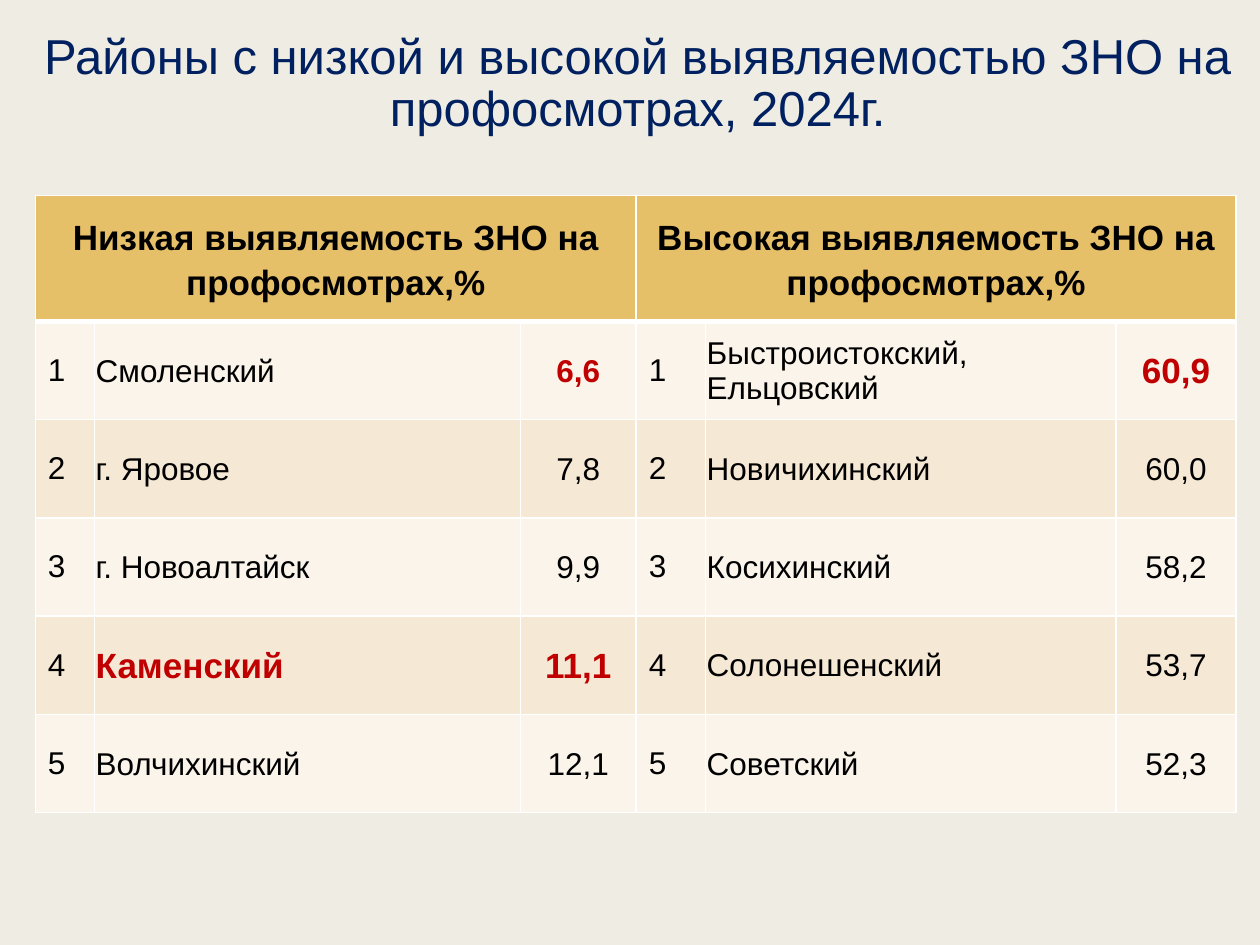
import dataclasses

import lxml.etree
import pptx
import pptx.dml.color
import pptx.enum.text
import pptx.oxml.ns
import pptx.table
import pptx.util

Inches = pptx.util.Inches
Pt = pptx.util.Pt
Align = pptx.enum.text.PP_ALIGN
Anchor = pptx.enum.text.MSO_ANCHOR
RGB = pptx.dml.color.RGBColor
qn = pptx.oxml.ns.qn

COLORS = {
    "back": "EFEDE3", "title": "002060", "head": "E6C069",
    "light": "FAF4EB", "dark": "F5E8D4", "line": "FFFFFF",
    "text": "000000", "alert": "C00000",
}
PLAIN = {"size": Pt(18), "bold": False, "color": "text"}
HEAD = {"size": Pt(20), "bold": True, "color": "text"}
ALERT = {"size": Pt(18), "bold": True, "color": "alert"}
BIG = {"size": Pt(20), "bold": True, "color": "alert"}
TITLE = {"size": Pt(28), "bold": False, "color": "title"}

# Cell margins: left, top, right, bottom
SIDES = ("left", "top", "right", "bottom")
PADS = {
    "head": (0.04, 0, 0.04, 0),
    "rank": (0.1, 0.05, 0.1, 0.05),
    "data": (0.01, 0.01, 0.01, 0),
}


@dataclasses.dataclass
class Area:
    name: str
    rate: str
    name_style: dict = dataclasses.field(default_factory=lambda: PLAIN)
    rate_style: dict = dataclasses.field(default_factory=lambda: PLAIN)


@dataclasses.dataclass
class Group:
    head: str
    areas: list[Area]


GROUPS = [
    Group("Низкая выявляемость ЗНО на профосмотрах,%", [
        Area("Смоленский", "6,6", rate_style=ALERT),
        Area("г. Яровое", "7,8"),
        Area("г. Новоалтайск", "9,9"),
        Area("Каменский", "11,1", BIG, BIG),
        Area("Волчихинский", "12,1"),
    ]),
    Group("Высокая выявляемость ЗНО на профосмотрах,%", [
        Area("Быстроистокский, Ельцовский", "60,9", rate_style=BIG),
        Area("Новичихинский", "60,0"),
        Area("Косихинский", "58,2"),
        Area("Солонешенский", "53,7"),
        Area("Советский", "52,3"),
    ]),
]
COLS = (0.47, 3.38, 0.92, 0.55, 3.26, 0.95)
ROWS = (1,) + (0.78,) * 5


def write(frame, text: str, style: dict, align, space: float = 1) -> None:
    para = frame.paragraphs[0]
    para.alignment = align
    para.line_spacing = space
    run = para.add_run()
    run.text = text
    run.font.name = "Arial"
    for key, value in style.items():
        if key == "color":
            run.font.color.rgb = RGB.from_string(COLORS[value])
        else:
            setattr(run.font, key, value)


def dress(cell: pptx.table._Cell, fill: str, pad: str, row: int) -> None:
    """Set margins, borders and fill of a cell; the head has a thick base."""
    cell.vertical_anchor = Anchor.MIDDLE
    for side, gap in zip(SIDES, PADS[pad]):
        setattr(cell, f"margin_{side}", Inches(gap))
    props = cell._tc.get_or_add_tcPr()
    widths = {"L": 1, "R": 1, "T": 3 if row == 1 else 1, "B": 3 if row == 0 else 1}
    for side, width in widths.items():
        line = lxml.etree.SubElement(props, qn(f"a:ln{side}"), w=str(Pt(width)))
        solid = lxml.etree.SubElement(line, qn("a:solidFill"))
        lxml.etree.SubElement(solid, qn("a:srgbClr"), val=COLORS["line"])
    cell.fill.solid()
    cell.fill.fore_color.rgb = RGB.from_string(COLORS[fill])


def draw(table: pptx.table.Table, group: Group, left: int) -> None:
    """Fill the three columns of a group, starting at column left."""
    for col in range(left, left + 3):
        dress(table.cell(0, col), "head", "head", 0)
    head = table.cell(0, left)
    head.merge(table.cell(0, left + 2))
    write(head.text_frame, group.head, HEAD, Align.CENTER, 1.15)
    for row, area in enumerate(group.areas, 1):
        parts = (
            (str(row), PLAIN, Align.LEFT, "rank"),
            (area.name, area.name_style, Align.LEFT, "data"),
            (area.rate, area.rate_style, Align.CENTER, "data"),
        )
        for col, (text, style, align, pad) in enumerate(parts, left):
            cell = table.cell(row, col)
            dress(cell, "light" if row % 2 else "dark", pad, row)
            write(cell.text_frame, text, style, align)


def main() -> None:
    deck = pptx.Presentation()
    deck.slide_width, deck.slide_height = Inches(10), Inches(7.5)
    slide = deck.slides.add_slide(deck.slide_layouts[5])
    slide.background.fill.solid()
    slide.background.fill.fore_color.rgb = RGB.from_string(COLORS["back"])

    title = slide.shapes.title
    box = {"left": 0.12, "top": 0.21, "width": 9.88, "height": 0.79}
    for key, value in box.items():
        setattr(title, key, Inches(value))
    frame = title.text_frame
    frame.auto_size = pptx.enum.text.MSO_AUTO_SIZE.NONE
    frame.vertical_anchor = Anchor.TOP
    write(frame, "Районы с низкой и высокой выявляемостью ЗНО на профосмотрах, 2024г.",
          TITLE, Align.CENTER, 0.89)

    table = slide.shapes.add_table(
        len(ROWS), len(COLS), Inches(0.28), Inches(1.55),
        Inches(sum(COLS)), Inches(sum(ROWS))).table
    for col, width in zip(table.columns, COLS):
        col.width = Inches(width)
    for row, height in zip(table.rows, ROWS):
        row.height = Inches(height)
    for i, group in enumerate(GROUPS):
        draw(table, group, 3 * i)
    deck.save("out.pptx")


if __name__ == "__main__":
    main()
